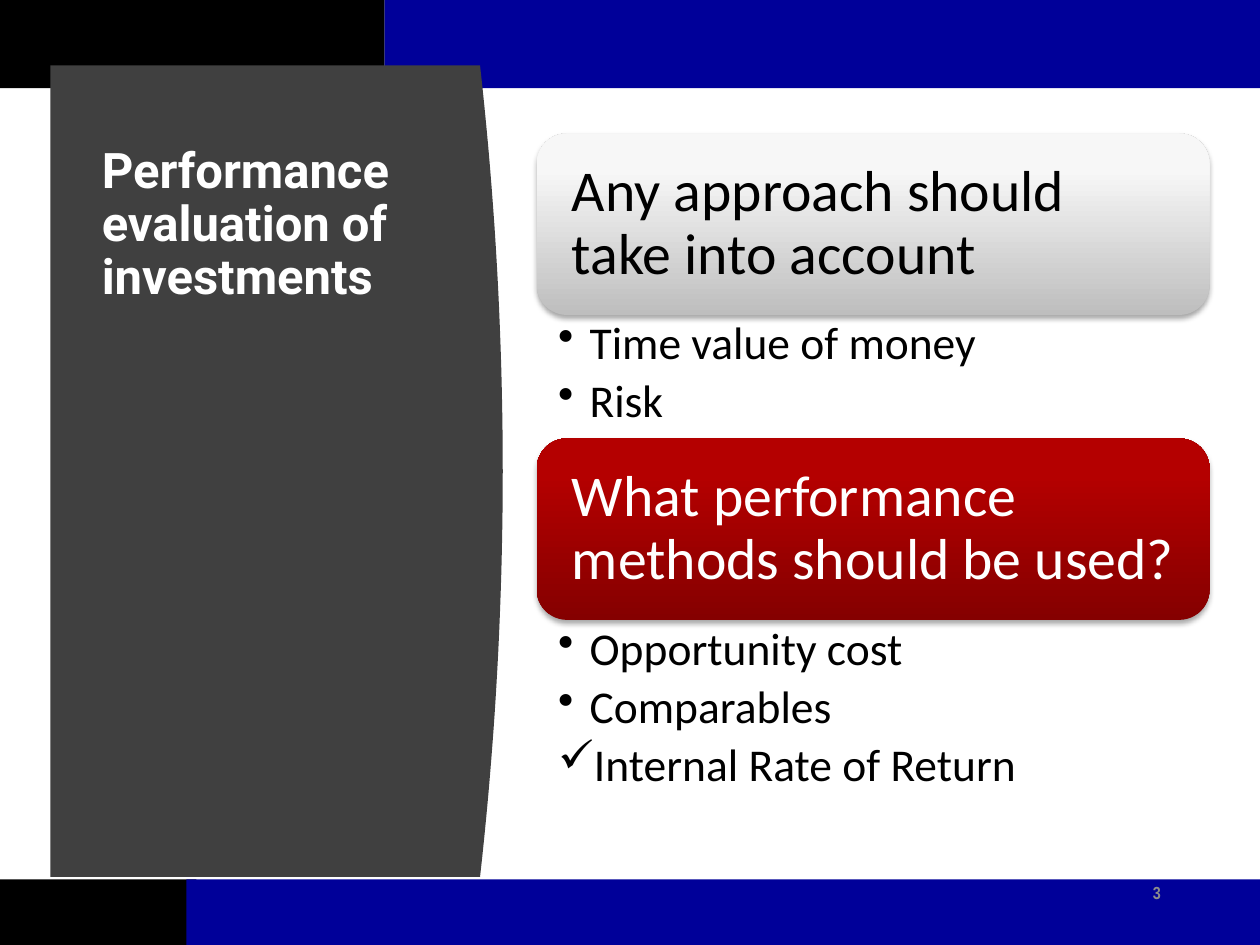
from lxml import etree
from pptx import Presentation
from pptx import util as u
from pptx.dml.color import RGBColor
from pptx.enum import shapes, text
from pptx.oxml.ns import qn

INK = {
    "black": "000000", "blue": "000099", "white": "FFFFFF",
    "panel": "404040", "number": "8C8C8C",
    "silver": "F7F7F7", "steel": "BEBEBE",
    "red": "B40000", "wine": "850000",
}
LEFT, WIDE, TALL = 4.26, 5.34, 1.44


def rgb(name):
    return RGBColor.from_string(INK[name])


def place(*box):
    return [u.Inches(v) for v in box]


def paint(shape, name):
    shape.shadow.inherit = False
    shape.fill.solid()
    shape.fill.fore_color.rgb = rgb(name)
    shape.line.fill.background()


def style(para, font, size, ink, bold=False):
    para.font.name = font
    para.font.size = u.Pt(size)
    para.font.bold = bold
    para.font.color.rgb = rgb(ink)
    para.line_spacing = 0.9


def inset(frame, left, top, right, bottom):
    frame.word_wrap = True
    frame.margin_left, frame.margin_top, frame.margin_right, frame.margin_bottom = place(
        left, top, right, bottom)


def add_bar(slide, box, ink):
    paint(slide.shapes.add_shape(shapes.MSO_SHAPE.RECTANGLE, *place(*box)), ink)


def add_panel(slide):
    """Dark panel whose right edge bulges as a parabola."""
    left, top, edge, base, bulge, steps = 0.4, 0.52, 3.81, 6.96, 0.18, 40
    curve = []
    for i in range(steps + 1):
        t = i / steps
        curve.append((edge + bulge * 4 * t * (1 - t), top + (base - top) * t))
    form = slide.shapes.build_freeform(*place(left, top), scale=1.0)
    form.add_line_segments([place(*p) for p in curve + [(left, base)]], close=True)
    paint(form.convert_to_shape(), "panel")


def add_label(slide, box, words, *look):
    frame = slide.shapes.add_textbox(*place(*box)).text_frame
    inset(frame, 0.1, 0.05, 0.1, 0.05)
    para = frame.paragraphs[0]
    para.text = words
    style(para, *look)
    return para


def add_shade(shape):
    """Soft shadow straight below the shape."""
    shape.shadow.inherit = False
    effects = shape._element.spPr.find(qn("a:effectLst"))
    shade = etree.SubElement(effects, qn("a:outerShdw"), blurRad=str(u.Pt(3.1)),
                             dist=str(u.Pt(1.8)), dir="5400000", rotWithShape="0")
    color = etree.SubElement(shade, qn("a:srgbClr"), val=INK["black"])
    etree.SubElement(color, qn("a:alpha"), val="35000")


def add_card(slide, top, words, low, high, ink):
    card = slide.shapes.add_shape(
        shapes.MSO_SHAPE.ROUNDED_RECTANGLE, *place(LEFT, top, WIDE, TALL))
    add_shade(card)
    card.line.fill.background()
    # Gradient from the bottom up
    card.fill.gradient()
    card.fill.gradient_angle = 90
    for stop, name, at in zip(card.fill.gradient_stops, (low, high), (0, 0.8)):
        stop.color.rgb = rgb(name)
        stop.position = at
    frame = card.text_frame
    inset(frame, 0.21, 0.21, 0.21, 0.21)
    frame.vertical_anchor = text.MSO_ANCHOR.MIDDLE
    para = frame.paragraphs[0]
    para.text = words
    para.alignment = text.PP_ALIGN.LEFT
    style(para, "Calibri", 33, ink)


def add_list(slide, top, tall, items):
    frame = slide.shapes.add_textbox(*place(LEFT, top, WIDE, tall)).text_frame
    inset(frame, 0.17, 0.05, 0.26, 0.05)
    for i, (mark, words) in enumerate(items):
        para = frame.add_paragraph() if i else frame.paragraphs[0]
        para.text = words
        style(para, "Calibri", 26, "black")
        para.space_after = u.Pt(5)
        props = para._p.get_or_add_pPr()
        props.set("marL", str(u.Inches(0.25)))
        props.set("indent", str(u.Inches(-0.25)))
        bullet = etree.Element(qn("a:buChar"), char=mark)
        props.find(qn("a:defRPr")).addprevious(bullet)


def main():
    deck = Presentation()
    deck.slide_width, deck.slide_height = place(10, 7.5)
    slide = deck.slides.add_slide(deck.slide_layouts[6])

    # Bands along the foot and head
    add_bar(slide, (0, 6.98, 1.56, 0.52), "black")
    add_bar(slide, (1.48, 6.98, 8.52, 0.52), "blue")
    add_bar(slide, (3.05, 0, 6.95, 0.7), "blue")
    add_bar(slide, (0, 0, 3.05, 0.7), "black")

    # Title panel and slide number
    add_panel(slide)
    add_label(slide, (0.71, 1.11, 2.8, 5.24), "Performance evaluation of investments",
              "Roboto", 28, "white", True)
    number = add_label(slide, (8.8, 6.95, 0.51, 0.4), "3",
                       "Arial Narrow", 10, "number", True)
    number.alignment = text.PP_ALIGN.RIGHT
    number.line_spacing = 1.0

    # Cards with their lists
    add_card(slide, 1.06, "Any approach should take into account",
             "steel", "silver", "black")
    add_list(slide, 2.49, 0.99, [("•", "Time value of money"), ("•", "Risk")])
    add_card(slide, 3.48, "What performance methods should be used?",
             "wine", "red", "white")
    add_list(slide, 4.92, 1.49, [("•", "Opportunity cost"), ("•", "Comparables"),
                                 ("✓", "Internal Rate of Return")])

    deck.save("out.pptx")


if __name__ == "__main__":
    main()
